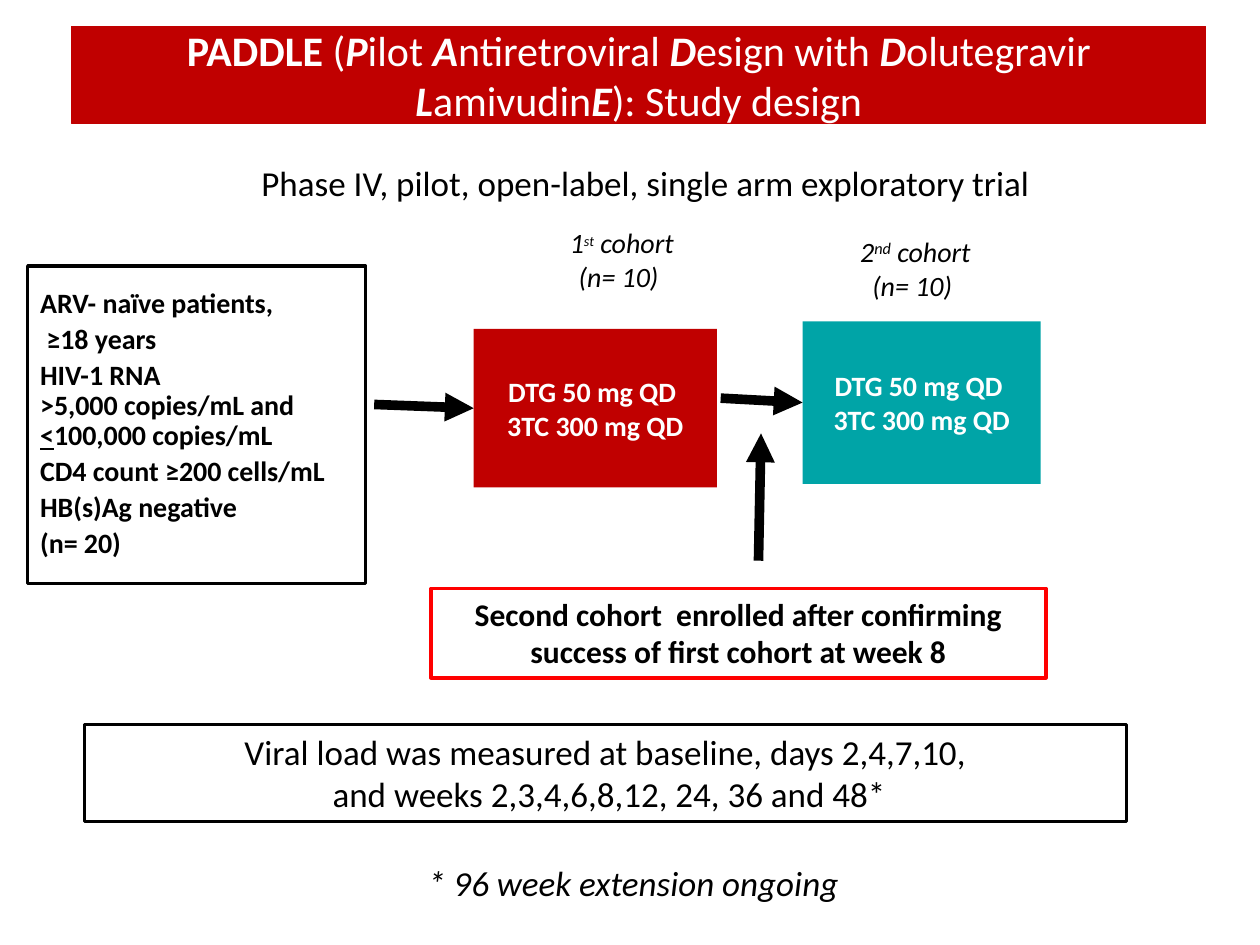
from dataclasses import dataclass

from lxml import etree
from pptx import Presentation
from pptx.dml.color import RGBColor
from pptx.enum import shapes, text
from pptx.oxml.ns import qn
from pptx.util import Inches, Pt


@dataclass(frozen=True)
class Theme:
    font: str = "Calibri"
    red: str = "C00000"
    teal: str = "00A4A7"
    alert: str = "FF0000"
    black: str = "000000"
    white: str = "FFFFFF"
    title: int = 24
    body: int = 20
    note: int = 18
    label: int = 16
    ordinal: int = 14
    outline: float = 2
    arrow: float = 5.5


THEME = Theme()
COLUMNS, ROWS = 100, 75
CENTER, LEFT = text.PP_ALIGN.CENTER, text.PP_ALIGN.LEFT
MIDDLE, TOP = text.MSO_ANCHOR.MIDDLE, text.MSO_ANCHOR.TOP

prs = Presentation()
prs.slide_width, prs.slide_height = Inches(10), Inches(7.5)
COLUMN, ROW = prs.slide_width / COLUMNS, prs.slide_height / ROWS


def grid(left, top, width=0, height=0):
    """Turn columns and rows into slide lengths."""
    return [round(n * unit) for n, unit in
            zip((left, top, width, height), (COLUMN, ROW, COLUMN, ROW))]


def place(shape, box):
    shape.left, shape.top, shape.width, shape.height = grid(*box)


def write(shape, paragraphs, size, color=THEME.black, align=CENTER,
          anchor=MIDDLE, wrap=True, **base):
    """Each paragraph is a string or a list of strings and (string, style) pairs."""
    frame = shape.text_frame
    frame.word_wrap, frame.vertical_anchor = wrap, anchor
    frame.auto_size = text.MSO_AUTO_SIZE.NONE
    for i, pieces in enumerate(paragraphs):
        paragraph = frame.paragraphs[0] if i == 0 else frame.add_paragraph()
        paragraph.alignment = align
        for piece in [pieces] if isinstance(pieces, str) else pieces:
            words, style = (piece, {}) if isinstance(piece, str) else piece
            style = {"size": size, **base, **style}
            for n, line in enumerate(words.split("\n")):
                if n:
                    paragraph.add_line_break()
                run = paragraph.add_run()
                run.text = line
                font = run.font
                font.name, font.size = THEME.font, Pt(style["size"])
                font.color.rgb = RGBColor.from_string(color)
                font.bold = style.get("bold", False)
                font.italic = style.get("italic", False)
                font.underline = style.get("underline", False)
                if style.get("raised"):
                    run._r.get_or_add_rPr().set("baseline", "30000")
    return frame


def paint(shape, fill, line=None, width=0.75):
    shape.fill.solid()
    shape.fill.fore_color.rgb = RGBColor.from_string(fill)
    if line:
        shape.line.color.rgb = RGBColor.from_string(line)
        shape.line.width = Pt(width)
    else:
        shape.line.fill.background()


def add_panel(slide, box, fill, line=None, width=THEME.outline):
    panel = slide.shapes.add_shape(shapes.MSO_SHAPE.RECTANGLE, *grid(*box))
    panel.shadow.inherit = False
    paint(panel, fill, line, width)
    return panel


def add_arrow(slide, start, end, target=None):
    arrow = slide.shapes.add_connector(
        shapes.MSO_CONNECTOR.STRAIGHT, *grid(*start)[:2], *grid(*end)[:2])
    if target is not None:
        arrow.end_connect(target, 1)
    arrow.line.color.rgb = RGBColor.from_string(THEME.black)
    arrow.line.width = Pt(THEME.arrow)
    etree.SubElement(arrow.line._get_or_add_ln(), qn("a:tailEnd"), type="triangle")
    etree.SubElement(arrow._element.spPr, qn("a:effectLst"))


def add_heading(slide, title_box, subtitle_box):
    """Title band and the trial type beneath it."""
    title, subtitle = slide.shapes.title, slide.placeholders[1]
    place(title, title_box)
    paint(title, THEME.red, THEME.red)
    initial = {"bold": True, "italic": True}
    write(title, [[("PADDLE", {"bold": True}), " (", ("P", initial), "ilot ",
                   ("A", initial), "ntiretroviral ", ("D", initial), "esign with ",
                   ("D", initial), "olutegravir ", ("L", initial), "amivudin",
                   ("E", initial), "): Study design"]], THEME.title, THEME.white)

    place(subtitle, subtitle_box)
    frame = write(subtitle, ["Phase IV, pilot, open-label, single arm exploratory trial"],
                  THEME.body, anchor=TOP)
    frame.paragraphs[0].space_before = Pt(0)
    properties = frame.paragraphs[0]._p.get_or_add_pPr()
    properties.set("marL", "0")
    properties.set("indent", "0")
    etree.SubElement(properties, qn("a:buNone"))


def add_criteria(slide, box):
    """Entry criteria of the patients."""
    criteria = add_panel(slide, box, THEME.white, THEME.black)
    frame = write(criteria, [
        "ARV- naïve patients,",
        " ≥18 years",
        ["HIV-1 RNA \n>5,000 copies/mL and ", ("<", {"underline": True}),
         "100,000 copies/mL"],
        "CD4 count ≥200 cells/mL",
        "HB(s)Ag negative",
        "(n= 20)",
    ], THEME.label, align=LEFT, bold=True)
    for i, paragraph in enumerate(frame.paragraphs):
        paragraph.line_spacing = 0.9
        paragraph.space_before = Pt(0.2 * THEME.label if i else 0)


def add_cohort(slide, box, label_box, fill, number, ordinal, ordinal_size):
    """Treatment block with its cohort label above."""
    treatment = add_panel(slide, box, fill)
    write(treatment, ["DTG 50 mg QD ", "3TC 300 mg QD"], THEME.label,
          THEME.white, wrap=False, bold=True)
    label = slide.shapes.add_textbox(*grid(*label_box))
    write(label, [[number, (ordinal, {"raised": True, "size": ordinal_size}), " cohort"],
                  "(n= 10) "], THEME.label, italic=True)
    return treatment


def add_remark(slide, box, line, paragraphs, size, **style):
    """Outlined remark below the study flow."""
    remark = add_panel(slide, box, THEME.white, line)
    write(remark, paragraphs, size, anchor=TOP, **style)


def add_footnote(slide, box):
    footnote = slide.shapes.add_textbox(*grid(*box))
    write(footnote, ["* 96 week extension ongoing"], THEME.body, align=LEFT,
          anchor=TOP, wrap=False, italic=True)


def build_study_design():
    slide = prs.slides.add_slide(prs.slide_layouts[1])
    add_heading(slide, (5.7, 2.1, 90, 7.7), (4.1, 12.3, 94.3, 6.3))

    # Study flow
    add_criteria(slide, (2.2, 21.1, 26.8, 25.2))
    first = add_cohort(slide, (37.6, 26.1, 19.3, 12.6), (40, 17.4, 18.7, 6.4),
                       THEME.red, "1", "st", THEME.ordinal)
    second = add_cohort(slide, (63.7, 25.5, 18.9, 12.9), (62.7, 18.1, 19.9, 6.4),
                        THEME.teal, "2", "nd", THEME.label)
    add_arrow(slide, (29.7, 32.1), (37.4, 32.3), first)
    add_arrow(slide, (57.2, 31.6), (63.5, 31.8), second)
    add_arrow(slide, (60.2, 44.5), (60.4, 34.4))

    # Remarks
    add_remark(slide, (34.2, 46.7, 48.8, 7.1), THEME.alert,
               ["Second cohort  enrolled after confirming success of first cohort at week 8"],
               THEME.note, bold=True)
    add_remark(slide, (6.7, 57.5, 82.7, 7.7), THEME.black,
               ["Viral load was measured at baseline, days 2,4,7,10,",
                " and weeks 2,3,4,6,8,12, 24, 36 and 48*"], THEME.body)
    add_footnote(slide, (33, 67.9, 35.4, 4.4))


if __name__ == "__main__":
    build_study_design()
    prs.save("out.pptx")
